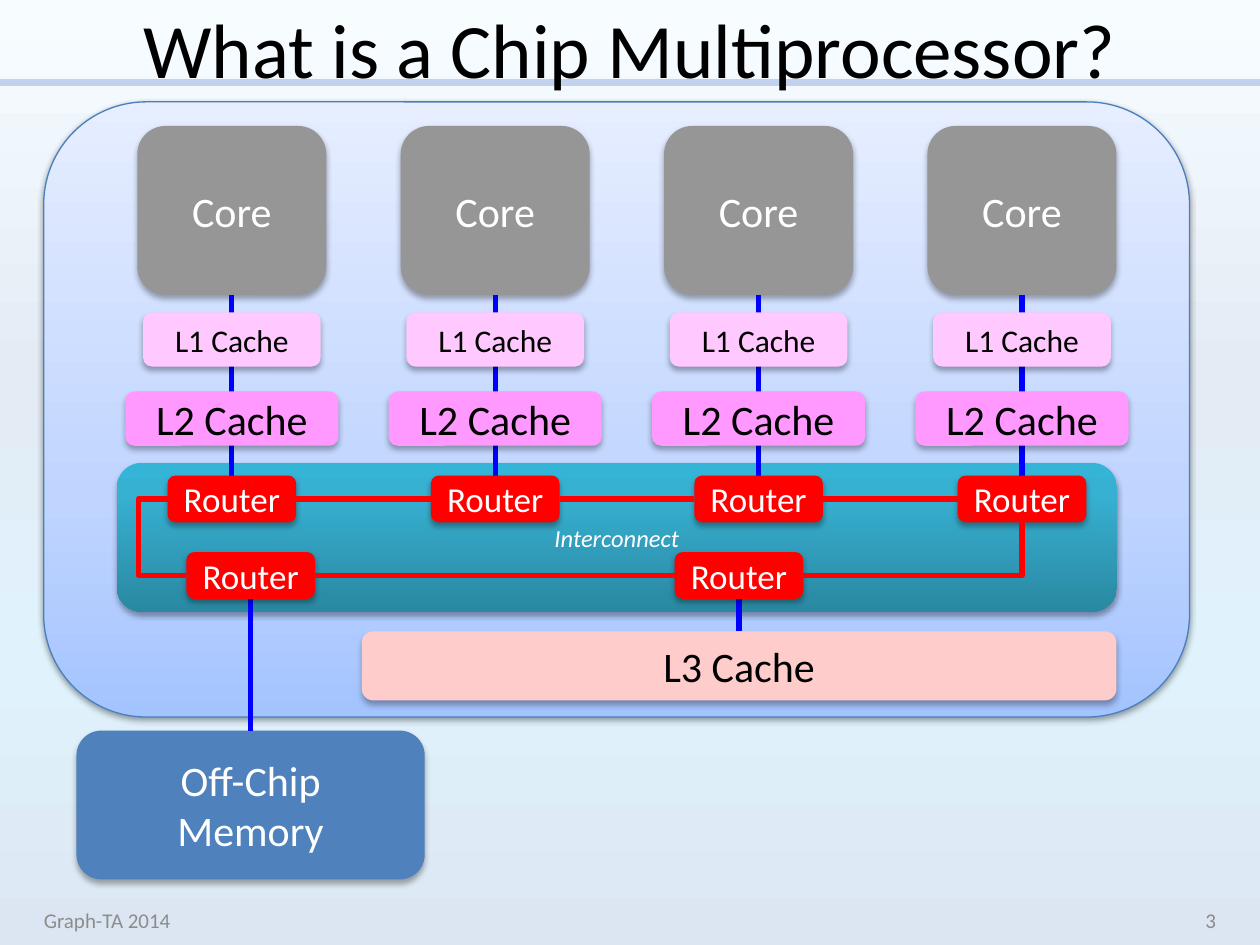
import lxml.etree
import pptx
import pptx.dml.color
import pptx.enum.shapes
import pptx.enum.text
import pptx.oxml.ns
import pptx.util

Pt = pptx.util.Pt
RGBColor = pptx.dml.color.RGBColor
ALIGN = pptx.enum.text.PP_ALIGN
CONNECTOR = pptx.enum.shapes.MSO_CONNECTOR
ROUNDED = pptx.enum.shapes.MSO_SHAPE.ROUNDED_RECTANGLE
qn = pptx.oxml.ns.qn

BLACK = RGBColor(0x00, 0x00, 0x00)
WHITE = RGBColor(0xFF, 0xFF, 0xFF)
FOOTER_GRAY = RGBColor(0x8C, 0x8C, 0x8C)
CORE_GRAY = RGBColor(0x96, 0x96, 0x96)
L1_PINK = RGBColor(0xFF, 0xC9, 0xFF)
L2_PINK = RGBColor(0xFF, 0x99, 0xFF)
L3_PINK = RGBColor(0xFF, 0xCC, 0xCC)
MEMORY_BLUE = RGBColor(0x4F, 0x81, 0xBD)
CHIP_EDGE = RGBColor(0x4B, 0x7E, 0xBC)
RULE_BLUE = RGBColor(0xC2, 0xD1, 0xED)
LINK_BLUE = RGBColor(0x00, 0x00, 0xFF)
RED = RGBColor(0xFF, 0x00, 0x00)

BACKGROUND = [(0, "F7FDFF"), (40, "E3EBF5"), (70, "E0F3FC"), (100, "DCE6F2")]
CHIP_FILL = [(0, "E6EEFF"), (65, "BFD4FF"), (100, "A4C4FF")]
INTERCONNECT_FILL = [(0, "34B4D6"), (20, "37B1D2"), (100, "2A88A2")]

TITLE = "What is a Chip Multiprocessor?"
FOOTERS = [("Graph-TA 2014", 18, ALIGN.LEFT), ("3", 534.25, ALIGN.RIGHT)]
COLUMN_CENTERS = [132.5 + 150.5 * column for column in range(4)]
CORE = dict(text="Core", top=72, width=108, height=96.5, fill=CORE_GRAY, color=WHITE, size=24)
L2_CACHE = dict(text="L2 Cache", top=223.75, width=121.75, height=31, fill=L2_PINK, color=BLACK, size=24)
L1_CACHE = dict(text="L1 Cache", top=178.5, width=101.5, height=31, fill=L1_PINK, color=BLACK, size=18)
ROUTER = dict(text="Router", width=73.5, height=26.75, fill=RED, color=WHITE, size=20)
UPPER_TOP, LOWER_TOP = 271.75, 315.5
LOWER_CENTERS = [143.25, 422.25]
RING_LEFT = 79
MEMORY_TOP, L3_TOP = 417.5, 360.75


def write_text(shape, text, size, color, align=ALIGN.CENTER, italic=False):
    frame = shape.text_frame
    frame.word_wrap = True
    frame.vertical_anchor = pptx.enum.text.MSO_ANCHOR.MIDDLE
    paragraph = frame.paragraphs[0]
    paragraph.text = text
    paragraph.alignment = align
    for run in paragraph.runs:
        run.font.name = "Calibri"
        run.font.size = Pt(size)
        run.font.color.rgb = color
        run.font.italic = italic


def fill_gradient(fill, owner, stops):
    fill.gradient()
    fill.gradient_angle = 270
    stop_list = next(owner.iter(qn("a:gsLst")))
    for stop in list(stop_list):
        stop_list.remove(stop)
    for position, color in stops:
        stop = lxml.etree.SubElement(stop_list, qn("a:gs"), pos=str(position * 1000))
        lxml.etree.SubElement(stop, qn("a:srgbClr"), val=color)


def add_shadow(shape, opacity, blur, distance):
    shape.shadow.inherit = False
    effects = shape._element.spPr.find(qn("a:effectLst"))
    shadow = lxml.etree.SubElement(
        effects, qn("a:outerShdw"), blurRad=str(Pt(blur)), dist=str(Pt(distance)),
        dir="5400000", rotWithShape="0")
    color = lxml.etree.SubElement(shadow, qn("a:srgbClr"), val="000000")
    lxml.etree.SubElement(color, qn("a:alpha"), val=str(opacity * 1000))


def add_box(slide, left, top, width, height, fill, text="", size=24, color=WHITE,
            italic=False, edge=None, shadow=(32, 3.5, 2.2)):
    shape = slide.shapes.add_shape(ROUNDED, Pt(left), Pt(top), Pt(width), Pt(height))
    if isinstance(fill, list):
        fill_gradient(shape.fill, shape._element.spPr, fill)
    else:
        shape.fill.solid()
        shape.fill.fore_color.rgb = fill
    if edge is None:
        shape.line.fill.background()
    else:
        shape.line.color.rgb = edge
        shape.line.width = Pt(0.75)
    add_shadow(shape, *shadow)
    if text:
        write_text(shape, text, size, color, italic=italic)


def add_centered(slide, center, width, **box):
    add_box(slide, left=center - width / 2, width=width, **box)


def add_line(slide, start, end, color, width=3, kind=CONNECTOR.STRAIGHT):
    line = slide.shapes.add_connector(kind, *map(Pt, start + end))
    line.line.color.rgb = color
    line.line.width = Pt(width)
    lxml.etree.SubElement(line._element.spPr, qn("a:effectLst"))
    return line


def add_ring(slide):
    half = ROUTER["width"] / 2
    upper = UPPER_TOP + ROUTER["height"] / 2
    lower = LOWER_TOP + ROUTER["height"] / 2
    for centers, level in ((COLUMN_CENTERS, upper), (LOWER_CENTERS, lower)):
        for left, right in zip(centers, centers[1:]):
            add_line(slide, (left + half, level), (right - half, level), RED)

    corner = add_line(slide, (LOWER_CENTERS[-1] + half, lower),
                      (COLUMN_CENTERS[-1], UPPER_TOP + ROUTER["height"]), RED, kind=CONNECTOR.ELBOW)
    corner._element.spPr.find(qn("a:prstGeom")).set("prst", "bentConnector2")

    start, end = LOWER_CENTERS[0] - half, COLUMN_CENTERS[0] - half
    loop = add_line(slide, (start, lower), (end, upper), RED, kind=CONNECTOR.ELBOW)
    bend = round((start - RING_LEFT) / (start - end) * 100000)
    adjustments = next(loop._element.iter(qn("a:avLst")))
    lxml.etree.SubElement(adjustments, qn("a:gd"), name="adj1", fmla=f"val {bend}")


def main():
    presentation = pptx.Presentation()
    presentation.slide_width, presentation.slide_height = Pt(720), Pt(540)
    slide = presentation.slides.add_slide(presentation.slide_layouts[5])
    fill_gradient(slide.background.fill, slide._element, BACKGROUND)

    rule = add_line(slide, (0, 47), (720, 47), RULE_BLUE, width=4)
    title = slide.shapes.title
    title._element.addprevious(rule._element)
    title.left, title.top, title.width, title.height = map(Pt, (36, 0, 648, 54))
    write_text(title, TITLE, 44, BLACK)
    for text, left, align in FOOTERS:
        footer = slide.shapes.add_textbox(Pt(left), Pt(511.25), Pt(167.75), Pt(28.75))
        write_text(footer, text, 12, FOOTER_GRAY, align)

    add_box(slide, 43.75, MEMORY_TOP, 199, 85, MEMORY_BLUE, "Off-Chip\nMemory")
    add_box(slide, 25, 58.25, 654.75, 351.5, CHIP_FILL, edge=CHIP_EDGE, shadow=(38, 3.1, 1.6))
    add_box(slide, 206.75, L3_TOP, 431.25, 39.5, L3_PINK, "L3 Cache", color=BLACK)
    for center in COLUMN_CENTERS:
        add_centered(slide, center, **CORE)
    add_box(slide, 66.75, 264.5, 571.5, 85, INTERCONNECT_FILL, "Interconnect", 14,
            italic=True, shadow=(35, 3.1, 1.8))

    for center in COLUMN_CENTERS:
        add_line(slide, (center, CORE["top"] + CORE["height"]), (center, UPPER_TOP), LINK_BLUE)
        for box in (L2_CACHE, L1_CACHE):
            add_centered(slide, center, **box)
    for center, bottom in zip(LOWER_CENTERS, (MEMORY_TOP, L3_TOP)):
        add_line(slide, (center, LOWER_TOP + ROUTER["height"]), (center, bottom), LINK_BLUE)
    for centers, top in ((COLUMN_CENTERS, UPPER_TOP), (LOWER_CENTERS, LOWER_TOP)):
        for center in centers:
            add_centered(slide, center, top=top, **ROUTER)
    add_ring(slide)

    presentation.save("out.pptx")


if __name__ == "__main__":
    main()
